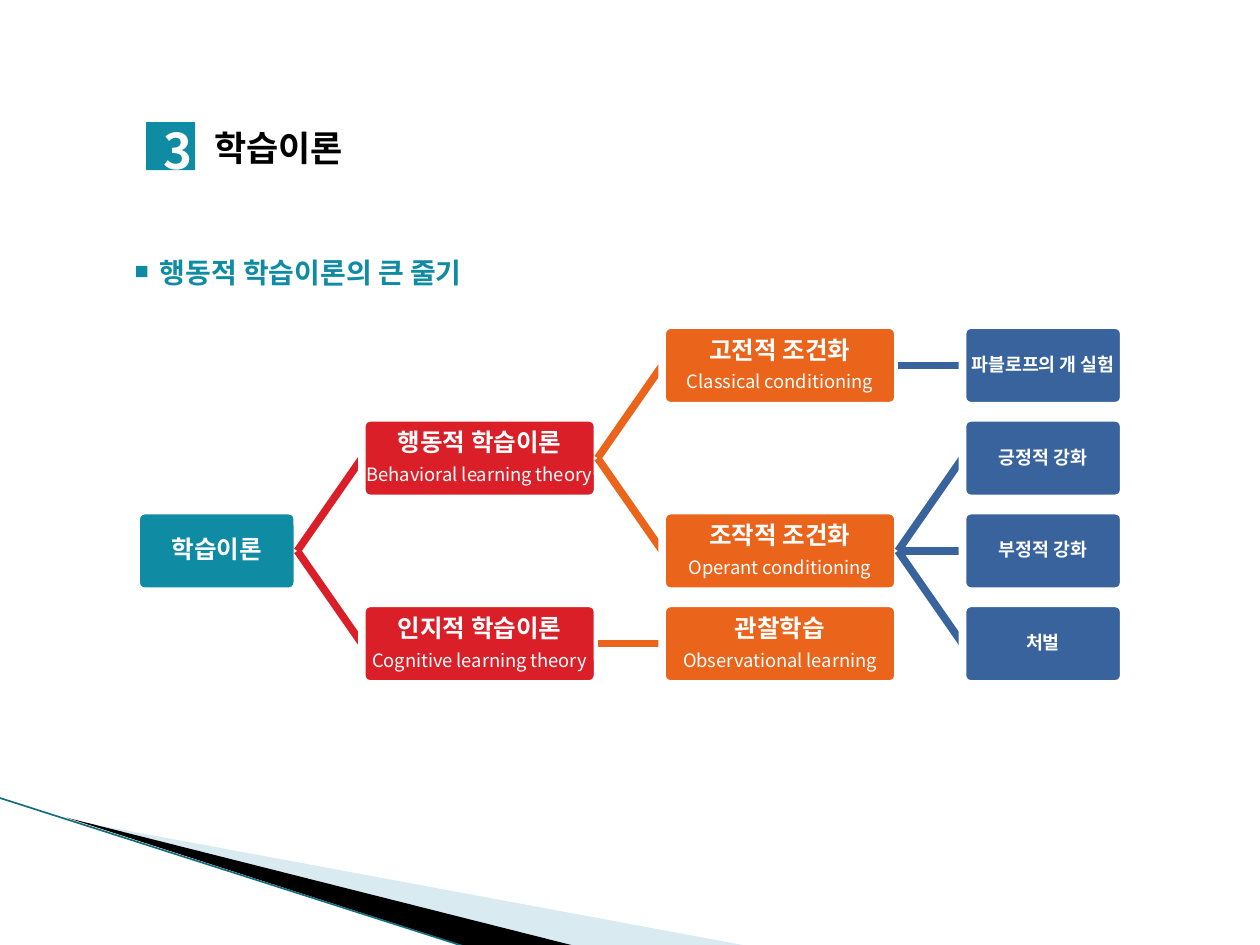
from dataclasses import dataclass

from lxml import etree
from pptx import Presentation
from pptx.dml.color import RGBColor
from pptx.enum import shapes as kinds, text as txt
from pptx.oxml import ns
from pptx.util import Pt

FONT = "Noto Sans CJK KR"
TEAL, RED, ORANGE, BLUE = "108BA4", "DA1F28", "EB641B", "39639D"
WHITE, BLACK = "FFFFFF", "000000"

# Tree grid: one width and colour per column, one centre line per row
LEFT, GAP = 77.8, 36.9
WIDTHS = (92.1, 134.7, 134.7, 92.1)
COLORS = (TEAL, RED, ORANGE, BLUE)
TOP_CENTER, ROW_STEP, NODE_HEIGHT = 208.8, 53, 46
LINE_WIDTH = 4.33


@dataclass(frozen=True)
class Node:
    korean: str
    row: int
    english: str = ""
    children: tuple["Node", ...] = ()


THEORIES = Node("학습이론", 2, children=(
    Node("행동적 학습이론", 1, "Behavioral learning theory", (
        Node("고전적 조건화", 0, "Classical conditioning", (
            Node("파블로프의 개 실험", 0),)),
        Node("조작적 조건화", 2, "Operant conditioning", (
            Node("긍정적 강화", 1), Node("부정적 강화", 2), Node("처벌", 3))),
    )),
    Node("인지적 학습이론", 3, "Cognitive learning theory", (
        Node("관찰학습", 3, "Observational learning"),)),
))


def rgb(color: str) -> RGBColor:
    return RGBColor.from_string(color)


def paint(shape, fill: str, line: str | None = None) -> None:
    shape.shadow.inherit = False
    shape.fill.solid()
    shape.fill.fore_color.rgb = rgb(fill)
    if line:
        shape.line.color.rgb = rgb(line)
        shape.line.width = Pt(LINE_WIDTH)
    else:
        shape.line.fill.background()


def set_frame(frame, *, inset=None, anchor=txt.MSO_ANCHOR.TOP, wrap=True) -> None:
    frame.word_wrap = wrap
    frame.auto_size = txt.MSO_AUTO_SIZE.NONE
    frame.vertical_anchor = anchor
    if inset is not None:
        frame.margin_left = frame.margin_right = Pt(inset)
        frame.margin_top = frame.margin_bottom = Pt(inset)


def write(paragraph, text: str, *, size: float, color=WHITE, bold=True,
          align=txt.PP_ALIGN.LEFT, spacing=1.0, after=0.0) -> None:
    props = paragraph._p.get_or_add_pPr()
    props.set("marL", "0")
    props.set("indent", "0")
    etree.SubElement(props, ns.qn("a:buNone"))
    paragraph.alignment = align
    paragraph.line_spacing = spacing
    paragraph.space_before = Pt(0)
    paragraph.space_after = Pt(after)
    run = paragraph.add_run()
    run.text = text
    run.font.size, run.font.bold, run.font.name = Pt(size), bold, FONT
    run.font.color.rgb = rgb(color)
    etree.SubElement(run._r.get_or_add_rPr(), ns.qn("a:ea")).set("typeface", FONT)


def place(shape, left: float, top: float, width: float, height: float) -> None:
    shape.left, shape.top = Pt(left), Pt(top)
    shape.width, shape.height = Pt(width), Pt(height)


def add_box(slide, kind, left: float, top: float, width: float, height: float):
    return slide.shapes.add_shape(kind, Pt(left), Pt(top), Pt(width), Pt(height))


def add_line(slide, start: tuple, end: tuple, color: str, width: float) -> None:
    line = slide.shapes.add_connector(
        kinds.MSO_CONNECTOR.STRAIGHT, *map(Pt, start), *map(Pt, end))
    line.line.color.rgb = rgb(color)
    line.line.width = Pt(width)
    etree.SubElement(line._element.spPr, ns.qn("a:effectLst"))


def add_wedge(slide, points: list, color: str, opacity: int = 100) -> None:
    first, *rest = [(Pt(x), Pt(y)) for x, y in points]
    builder = slide.shapes.build_freeform(*first)
    builder.add_line_segments(rest, close=True)
    wedge = builder.convert_to_shape()
    paint(wedge, color)
    if opacity < 100:
        fill = wedge._element.spPr.find(".//" + ns.qn("a:srgbClr"))
        etree.SubElement(fill, ns.qn("a:alpha")).set("val", str(opacity * 1000))


def add_tree(slide, node: Node, column: int = 0) -> None:
    """Draw a node, then each branch: its link first and its subtree on top."""
    left = LEFT + sum(WIDTHS[:column]) + GAP * column
    center = TOP_CENTER + ROW_STEP * node.row
    box = add_box(slide, kinds.MSO_SHAPE.ROUNDED_RECTANGLE, left,
                  center - NODE_HEIGHT / 2, WIDTHS[column], NODE_HEIGHT)
    box.adjustments[0] = 0.1
    paint(box, COLORS[column], WHITE)

    frame = box.text_frame
    set_frame(frame, inset=0.5, anchor=txt.MSO_ANCHOR.MIDDLE)
    size = 10.5 if column == 3 else 14
    label = dict(align=txt.PP_ALIGN.CENTER, spacing=0.9)
    write(frame.paragraphs[0], node.korean, size=size, after=0.35 * size, **label)
    if node.english:
        write(frame.add_paragraph(), node.english, size=10.5, bold=False,
              after=3.7, **label)

    right = left + WIDTHS[column]
    for child in node.children:
        add_line(slide, (right, center),
                 (right + GAP, TOP_CENTER + ROW_STEP * child.row),
                 COLORS[column + 1], LINE_WIDTH)
        add_tree(slide, child, column + 1)


def main() -> None:
    deck = Presentation()
    deck.slide_width, deck.slide_height = Pt(720), Pt(540)
    slide = deck.slides.add_slide(deck.slide_layouts[1])
    title, subtitle = slide.placeholders

    # Corner decoration
    add_wedge(slide, [(39.6, 468.5), (428.4, 540.7), (328.3, 540.7)], "A0CBDC", 40)
    add_wedge(slide, [(38.2, 467.3), (329, 540.7), (267.8, 541.4)], BLACK)
    add_line(slide, (-0.7, 455.8), (267.1, 541.4), "156D80", 0.95)

    # Theory tree
    add_tree(slide, THEORIES)

    # Subheading with its square marker
    place(subtitle, 84.2, 142.6, 240, 26.6)
    set_frame(subtitle.text_frame, wrap=False)
    write(subtitle.text_frame.paragraphs[0], "행동적 학습이론의 큰 줄기",
          size=16, color=TEAL)
    paint(add_box(slide, kinds.MSO_SHAPE.RECTANGLE, 77.8, 151.9, 6.5, 6.5), TEAL)

    # Numbered title
    place(title, 115.2, 68.4, 290, 31.7)
    set_frame(title.text_frame)
    write(title.text_frame.paragraphs[0], "학습이론", size=20, color=BLACK)
    paint(add_box(slide, kinds.MSO_SHAPE.RECTANGLE, 83.5, 69.8, 28, 27.4), TEAL)
    number = slide.shapes.add_textbox(Pt(93.6), Pt(69.1), Pt(17.3), Pt(33.8))
    set_frame(number.text_frame, inset=0, wrap=False)
    write(number.text_frame.paragraphs[0], "3", size=28)

    deck.save("out.pptx")


if __name__ == "__main__":
    main()
